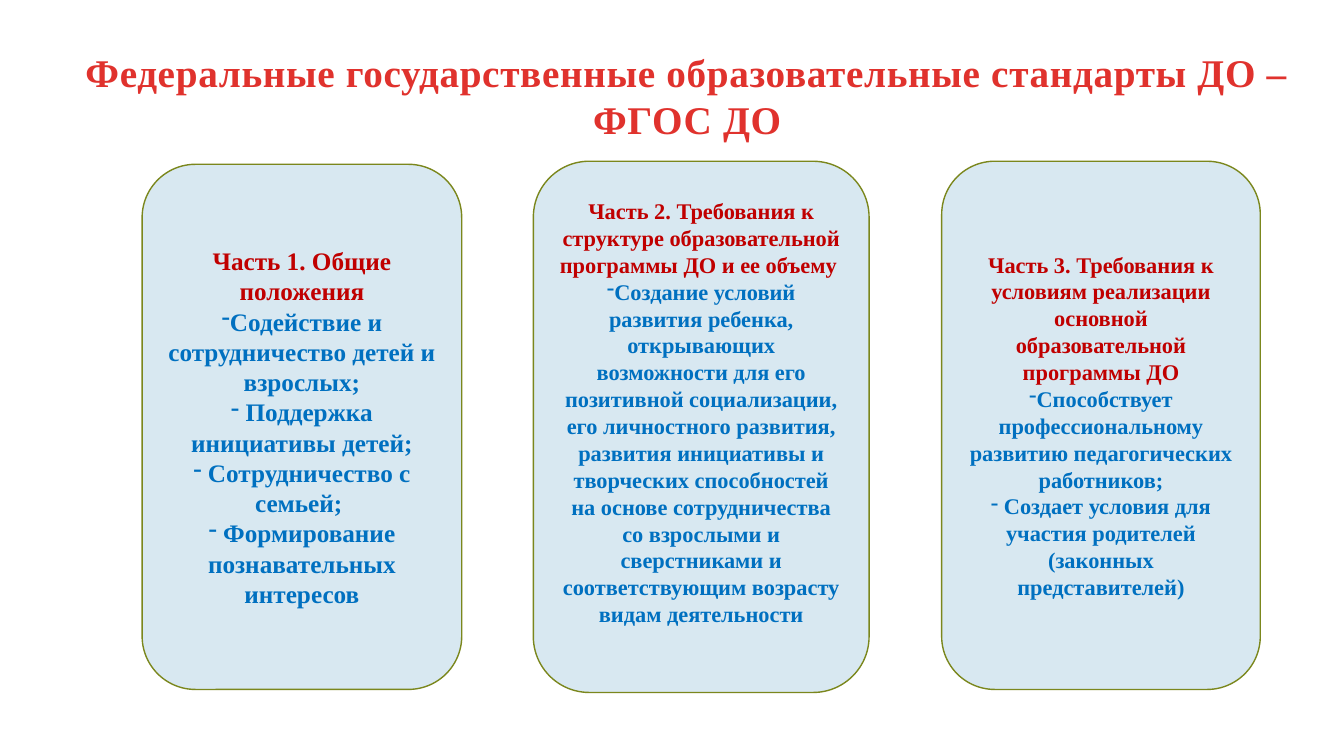
"""Build a slide with the three parts of the preschool education standard."""
from pptx import Presentation
from pptx.dml.color import RGBColor
from pptx.enum.shapes import MSO_SHAPE
from pptx.enum.text import MSO_ANCHOR, MSO_AUTO_SIZE, PP_ALIGN
from pptx.oxml.ns import qn
from pptx.util import Inches, Pt

ROUNDED = MSO_SHAPE.ROUNDED_RECTANGLE
MIDDLE = MSO_ANCHOR.MIDDLE
GROW = MSO_AUTO_SIZE.SHAPE_TO_FIT_TEXT
CENTER = PP_ALIGN.CENTER

FONT = "Times New Roman"
RED, BLUE = "C00000", "0070C0"
CARD_FILL, CARD_LINE = "D8E8F1", "7B871D"
TITLE = "Федеральные государственные образовательные стандарты ДО – ФГОС ДО"
TITLE_STOPS = [(0.25, "E0322D"), (1, "A2201C")]

CARDS = [
    {
        "box": (1.41, 1.63, 3.17, 5.21), "size": 18, "bottom": 0.05,
        "heading": "Часть 1. Общие положения",
        "items": [
            "Содействие и сотрудничество детей и взрослых;",
            " Поддержка инициативы детей;",
            " Сотрудничество с семьей; ",
            " Формирование познавательных интересов",
        ],
    },
    {
        "box": (5.29, 1.6, 3.33, 5.27), "size": 16, "bottom": 0.34,
        "heading": "Часть 2. Требования к структуре образовательной "
                   "программы ДО и ее объему ",
        "items": [
            "Создание условий развития ребенка, открывающих возможности "
            "для его позитивной социализации, его личностного развития, "
            "развития инициативы и творческих способностей на основе "
            "сотрудничества со взрослыми и сверстниками и "
            "соответствующим возрасту видам деятельности",
        ],
    },
    {
        "box": (9.34, 1.6, 3.16, 5.24), "size": 16, "bottom": 0.05,
        "heading": "Часть 3. Требования к условиям реализации основной "
                   "образовательной программы ДО",
        "items": [
            "Способствует профессиональному развитию педагогических работников;",
            " Создает условия для участия родителей (законных представителей)",
        ],
    },
]


def rgb(value):
    """Turn a hex string into a colour."""
    return RGBColor.from_string(value)


def set_all(obj, **values):
    """Set each given attribute on an object."""
    for name, value in values.items():
        setattr(obj, name, value)


def add_text(p, text, size):
    """Write a centred bold run and return it."""
    p.alignment = CENTER
    r = p.add_run()
    r.text = text
    set_all(r.font, name=FONT, size=Pt(size), bold=True)
    return r


def add_dash(p):
    """Give a paragraph a dash bullet without an indent."""
    pPr = p._p.get_or_add_pPr()
    pPr.set("marL", "0")
    pPr.set("indent", "0")
    pPr.append(pPr.makeelement(qn("a:buFontTx"), {}))
    pPr.append(pPr.makeelement(qn("a:buChar"), {"char": "-"}))


def add_title(s):
    """Add the title with its gradient letters."""
    sp = s.shapes.add_textbox(*map(Inches, (0.29, 0.43, 13.05, 1.04)))
    tf = sp.text_frame
    set_all(tf, word_wrap=True, auto_size=GROW)
    r = add_text(tf.paragraphs[0], TITLE, 28)
    r._r.get_or_add_rPr().set("spc", "50")
    fill = r.font.fill
    fill.gradient()
    fill.gradient_angle = 270
    for stop, (position, color) in zip(fill.gradient_stops, TITLE_STOPS):
        stop.position = position
        stop.color.rgb = rgb(color)


def add_card(s, box, size, bottom, heading, items):
    """Add a rounded card with a heading and dashed items."""
    sp = s.shapes.add_shape(ROUNDED, *map(Inches, box))
    sp.shadow.inherit = False
    sp.fill.solid()
    sp.fill.fore_color.rgb = rgb(CARD_FILL)
    sp.line.color.rgb = rgb(CARD_LINE)
    sp.line.width = Pt(1)
    tf = sp.text_frame
    set_all(tf, word_wrap=True, vertical_anchor=MIDDLE,
            margin_bottom=Inches(bottom))
    r = add_text(tf.paragraphs[0], heading, size)
    r.font.color.rgb = rgb(RED)
    for item in items:
        p = tf.add_paragraph()
        add_dash(p)
        r = add_text(p, item, size)
        r.font.color.rgb = rgb(BLUE)


def main():
    """Build and save the slide."""
    prs = Presentation()
    set_all(prs, slide_width=Inches(13.33), slide_height=Inches(7.5))
    s = prs.slides.add_slide(prs.slide_layouts[6])
    add_title(s)
    for card in CARDS:
        add_card(s, **card)
    prs.save("out.pptx")


if __name__ == "__main__":
    main()
